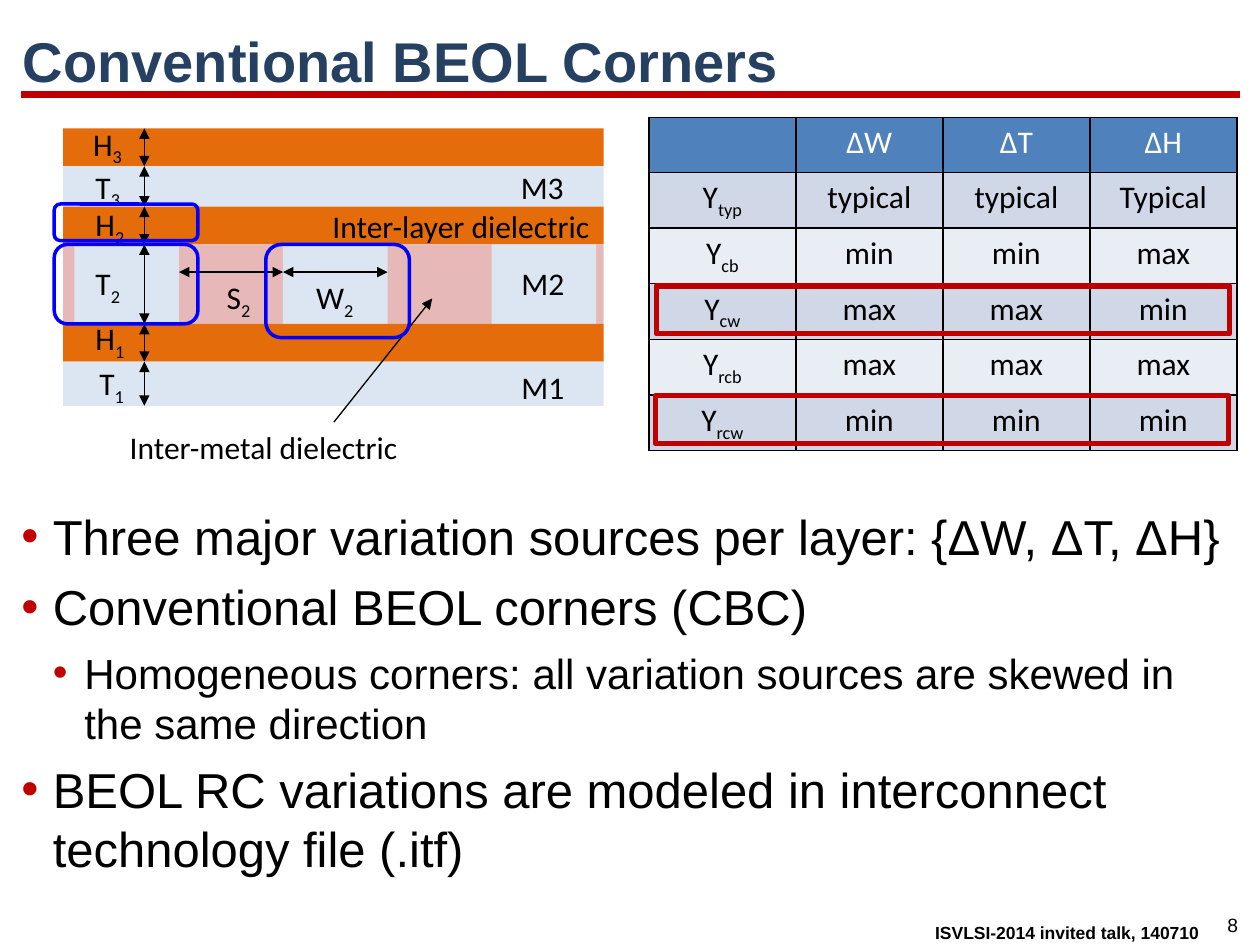
"""Build the slide on conventional BEOL corners."""
from dataclasses import dataclass
from itertools import product

from lxml.etree import SubElement
from pptx import Presentation
from pptx.dml.color import RGBColor
from pptx.enum.shapes import MSO_CONNECTOR as Connector, MSO_SHAPE as Shape
from pptx.enum.text import MSO_ANCHOR as Anchor, MSO_AUTO_SIZE as AutoSize, PP_ALIGN as Align
from pptx.oxml.ns import qn
from pptx.util import Pt


@dataclass(frozen=True)
class Theme:
    navy: str = "254061"
    red: str = "C00000"
    blue: str = "0000FF"
    black: str = "000000"
    white: str = "FFFFFF"
    insulator: str = "E46C0A"
    filler: str = "E6B9B8"
    metal: str = "DCE6F2"
    header: str = "4F81BD"
    bands: tuple = ("D0D8E8", "E9EDF4")
    heading: str = "Arial"
    label: str = "Calibri"
    title_size: float = 32
    bullet_sizes: tuple = (28, 24)
    label_size: float = 18
    number_size: float = 11
    footer_size: float = 10


@dataclass(frozen=True)
class Box:
    left: float
    top: float
    width: float
    height: float

    def lengths(self) -> tuple:
        return Pt(self.left), Pt(self.top), Pt(self.width), Pt(self.height)


@dataclass(frozen=True)
class Layer:
    height: float
    fill: str
    name: str
    label_left: float
    label_top: float


@dataclass(frozen=True)
class Label:
    text: str
    left: float
    top: float
    width: float
    wrap: bool = False


@dataclass(frozen=True)
class Frame:
    box: Box
    shape: Shape
    color: str
    weight: float


THEME = Theme()
STACK = Box(36, 73.4, 309, 158.5)
WIRE_LEFT, WIRE_WIDTH, WIRE_PITCH = 42.5, 59.8, 119.2
ARROW_X, ARROW_Y = 82.5, 155.5

LAYERS = (
    Layer(21.6, THEME.insulator, "H_3", 46.1, 67.7),
    Layer(23.1, THEME.metal, "T_3", 47.5, 92.2),
    Layer(21.6, THEME.insulator, "H_2", 47.5, 113.8),
    Layer(45.4, THEME.filler, "T_2", 47.5, 147.6),
    Layer(21.6, THEME.insulator, "H_1", 47.5, 178.6),
    Layer(25.2, THEME.metal, "T_1", 49.7, 204.5),
)
LABELS = (
    Label("M3", 290.5, 92.2, 39.6),
    Label("M2", 290.9, 147.6, 39.6),
    Label("M1", 290.9, 206.6, 39.6),
    Label("S_2", 122.4, 155.5, 28.8),
    Label("W_2", 173.5, 155.5, 36.7),
    Label("Inter-layer dielectric", 182.9, 114.5, 162),
    Label("Inter-metal dielectric", 67, 241.2, 188.6, True),
)
CORNERS = (
    ("", "ΔW", "ΔT", "ΔH"),
    ("Y_typ", "typical", "typical", "Typical"),
    ("Y_cb", "min", "min", "max"),
    ("Y_cw", "max", "max", "min"),
    ("Y_rcb", "max", "max", "max"),
    ("Y_rcw", "min", "min", "min"),
)
FRAMES = (
    Frame(Box(151.9, 139.7, 82.1, 53.3), Shape.ROUNDED_RECTANGLE, THEME.blue, 2),
    Frame(Box(31, 139.7, 82.1, 45.4), Shape.ROUNDED_RECTANGLE, THEME.blue, 2),
    Frame(Box(31, 116.6, 82.1, 20.9), Shape.ROUNDED_RECTANGLE, THEME.blue, 2),
    Frame(Box(374.4, 226.1, 327.6, 27.4), Shape.RECTANGLE, THEME.red, 3),
    Frame(Box(375.1, 163.4, 327.6, 27.4), Shape.RECTANGLE, THEME.red, 3),
)
BULLETS = (
    (0, "Three major variation sources per layer: {ΔW, ΔT, ΔH}"),
    (0, "Conventional BEOL corners (CBC)"),
    (1, "Homogeneous corners: all variation sources are skewed in the same direction"),
    (0, "BEOL RC variations are modeled in interconnect technology file (.itf)"),
)


def style(font, size: float, color: str, name: str, bold: bool = False) -> None:
    """Apply one text style to a font."""
    font.size, font.name, font.bold = Pt(size), name, bold
    font.color.rgb = RGBColor.from_string(color)


def write(p, text: str, color: str = THEME.black) -> None:
    """Write a label, lowering whatever follows an underscore."""
    base, _, sub = text.partition("_")
    for part, baseline in ((base, None), (sub, "-25000")):
        if part:
            r = p.add_run()
            r.text = part
            style(r.font, THEME.label_size, color, THEME.label)
            if baseline:
                r.font._element.set("baseline", baseline)


def add_text(s, box: Box, wrap: bool = False):
    """Add an empty text box and return its paragraph."""
    tf = s.shapes.add_textbox(*box.lengths()).text_frame
    tf.word_wrap, tf.auto_size = wrap, AutoSize.SHAPE_TO_FIT_TEXT
    return tf.paragraphs[0]


def add_label(s, label: Label) -> None:
    """Add one label of the cross-section."""
    write(add_text(s, Box(label.left, label.top, label.width, 28.8), label.wrap), label.text)


def add_block(s, box: Box, fill: str) -> None:
    """Add a filled rectangle without outline."""
    sp = s.shapes.add_shape(Shape.RECTANGLE, *box.lengths())
    sp.shadow.inherit = False
    sp.fill.solid()
    sp.fill.fore_color.rgb = RGBColor.from_string(fill)
    sp.line.fill.background()


def add_frame(s, frame: Frame) -> None:
    """Add an unfilled outline around a region."""
    sp = s.shapes.add_shape(frame.shape, *frame.box.lengths())
    sp.shadow.inherit = False
    sp.fill.background()
    sp.line.color.rgb = RGBColor.from_string(frame.color)
    sp.line.width = Pt(frame.weight)


def add_line(s, start: tuple, end: tuple, ends: tuple = (),
             color: str = THEME.black, weight: float = 0.75) -> None:
    """Add a line with arrowheads at the named ends."""
    sp = s.shapes.add_connector(Connector.STRAIGHT, *map(Pt, start + end))
    sp.line.color.rgb = RGBColor.from_string(color)
    sp.line.width = Pt(weight)
    for tag in ends:
        SubElement(sp.line._get_or_add_ln(), qn(f"a:{tag}"), type="triangle")
    SubElement(sp._element.spPr, qn("a:effectLst"))


def add_cross_section(s) -> None:
    """Draw the metal stack, its dimensions and labels."""
    both = ("headEnd", "tailEnd")
    spans, top = [], STACK.top
    for layer in LAYERS:
        add_block(s, Box(STACK.left, top, STACK.width, layer.height), layer.fill)
        if layer.fill == THEME.filler:
            for i in range(3):
                left = WIRE_LEFT + i * WIRE_PITCH
                add_block(s, Box(left, top, WIRE_WIDTH, layer.height), THEME.metal)
        spans.append((top, top + layer.height))
        top += layer.height
    for layer, (start, end) in zip(LAYERS, spans):
        add_line(s, (ARROW_X, start), (ARROW_X, end), both)
        add_label(s, Label(layer.name, layer.label_left, layer.label_top, 31))
    second = WIRE_LEFT + WIRE_PITCH
    for left, right in ((WIRE_LEFT + WIRE_WIDTH, second), (second, second + WIRE_WIDTH)):
        add_line(s, (right, ARROW_Y), (left, ARROW_Y), both)
    for label in LABELS:
        add_label(s, label)
    add_line(s, (190.8, 241.2), (247, 170.6), ("tailEnd",))


def fill_cell(cell, text: str, fill: str, color: str) -> None:
    """Give a cell its borders, fill and text."""
    tc_pr = cell._tc.get_or_add_tcPr()
    for tag in ("lnL", "lnR", "lnT", "lnB"):
        solid = SubElement(SubElement(tc_pr, qn(f"a:{tag}"), w=str(Pt(1))), qn("a:solidFill"))
        SubElement(solid, qn("a:srgbClr"), val=THEME.black)
    cell.fill.solid()
    cell.fill.fore_color.rgb = RGBColor.from_string(fill)
    p = cell.text_frame.paragraphs[0]
    p.alignment = Align.CENTER
    write(p, text, color)


def add_corner_table(s) -> None:
    """Add the table of corner settings."""
    rows, cols = len(CORNERS), len(CORNERS[0])
    box = Box(370.8, 67, 336, 189.6)
    table = s.shapes.add_table(rows, cols, *box.lengths()).table
    for row in table.rows:
        row.height = Pt(box.height / rows)
    for i, j in product(range(rows), range(cols)):
        fill = THEME.bands[(i - 1) % 2] if i else THEME.header
        color = THEME.black if i else THEME.white
        fill_cell(table.cell(i, j), CORNERS[i][j], fill, color)


def place(sp, box: Box) -> None:
    """Move and size a placeholder."""
    sp.left, sp.top, sp.width, sp.height = box.lengths()


def fill_title(s) -> None:
    """Write the title and the rule below it."""
    add_line(s, (12.2, 54), (708.5, 54), color=THEME.red, weight=4.5)
    sp = s.shapes.title
    place(sp, Box(5.8, 12.2, 714.2, 44.6))
    tf = sp.text_frame
    tf.text = "Conventional BEOL Corners"
    tf.vertical_anchor, tf.auto_size = Anchor.MIDDLE, AutoSize.NONE
    p = tf.paragraphs[0]
    p.alignment = Align.LEFT
    style(p.runs[0].font, THEME.title_size, THEME.navy, THEME.heading, True)


def fill_body(s) -> None:
    """Write the bullet list."""
    sp = s.placeholders[1]
    place(sp, Box(5, 283, 705.6, 236.9))
    tf = sp.text_frame
    tf.auto_size, tf.margin_top = AutoSize.NONE, Pt(6.5)
    for i, (level, text) in enumerate(BULLETS):
        p = tf.add_paragraph() if i else tf.paragraphs[0]
        p.text, p.level = text, level
        p.space_before = Pt(6.5 if i else 0)
        p_pr = p._p.get_or_add_pPr()
        p_pr.set("marL", str(Pt(18 * (level + 1))))
        p_pr.set("indent", str(Pt(-18)))
        SubElement(SubElement(p_pr, qn("a:buClr")), qn("a:srgbClr"), val=THEME.red)
        SubElement(p_pr, qn("a:buFont"), typeface=THEME.heading)
        SubElement(p_pr, qn("a:buChar"), char="•")
        style(p.runs[0].font, THEME.bullet_sizes[level], THEME.black, THEME.heading)


def add_footer(s) -> None:
    """Add the page number and the talk line."""
    for text, box, align, size, bold in (
        ("8", Box(690.5, 518.4, 28, 20.9), Align.CENTER, THEME.number_size, False),
        ("ISVLSI-2014 invited talk, 140710", Box(499, 523.4, 193, 19.4), Align.RIGHT,
         THEME.footer_size, True),
    ):
        p = add_text(s, box, bold)
        p.text, p.alignment = text, align
        style(p.runs[0].font, size, THEME.black, THEME.heading, bold)


def main() -> None:
    """Build and save the slide."""
    prs = Presentation()
    prs.slide_width, prs.slide_height = Pt(720), Pt(540)
    s = prs.slides.add_slide(prs.slide_layouts[1])
    add_footer(s)
    fill_title(s)
    fill_body(s)
    add_cross_section(s)
    add_corner_table(s)
    for frame in FRAMES:
        add_frame(s, frame)
    prs.save("out.pptx")


if __name__ == "__main__":
    main()
